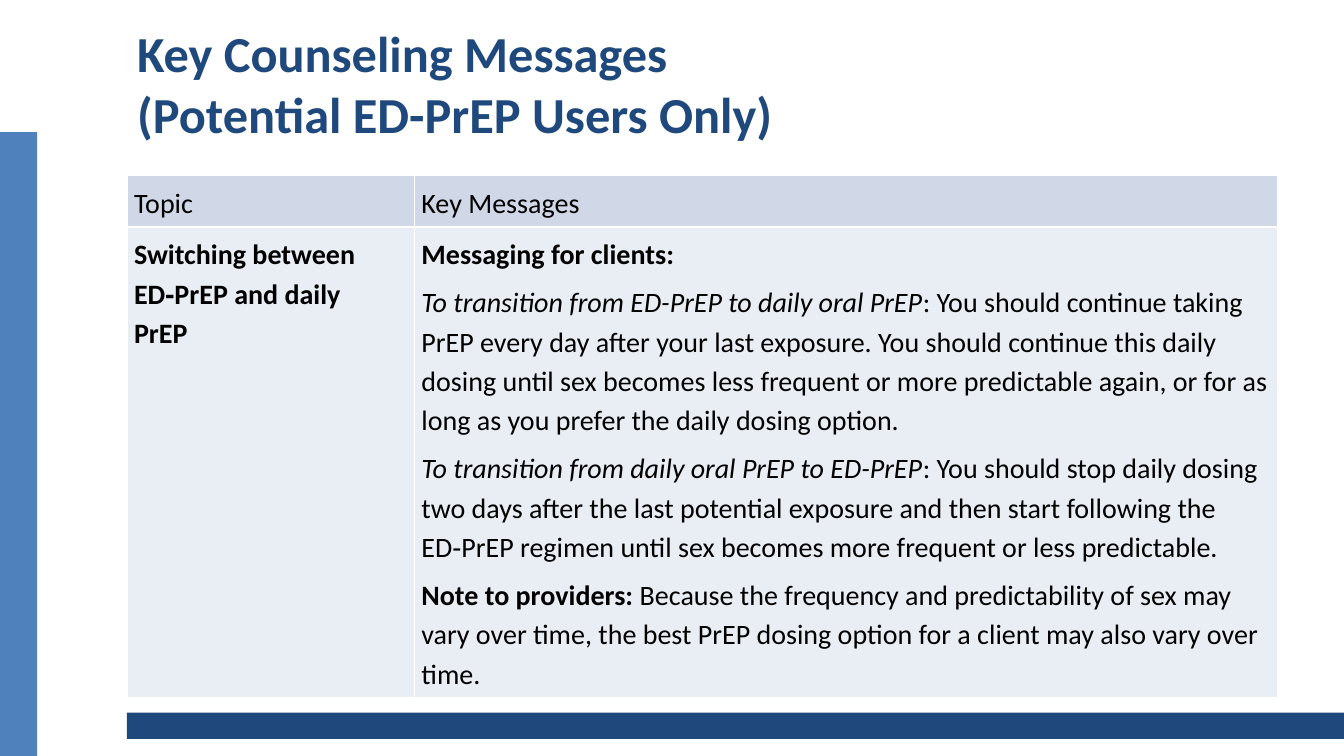
from lxml.etree import SubElement
from pptx import Presentation
from pptx.dml.color import RGBColor
from pptx.enum.shapes import MSO_SHAPE
from pptx.enum.text import MSO_ANCHOR, MSO_AUTO_SIZE, PP_ALIGN
from pptx.oxml.ns import qn
from pptx.util import Pt

PX = 9144  # EMU per px, 100 px to the inch
NAVY, BLUE = "1F497D", "4F81BD"
HEAD, BODY = "D0D8E8", "E9EDF4"
BLACK, WHITE = "000000", "FFFFFF"


def px(*nums):
    return [n * PX for n in nums]


def color(code):
    return RGBColor.from_string(code)


class Deck:
    font = "Calibri"

    def __init__(self, wide, high):
        self.prs = Presentation()
        self.prs.slide_width, self.prs.slide_height = px(wide, high)
        self.slide = self.prs.slides.add_slide(self.prs.slide_layouts[5])

    def style(self, run, size, code, bold=False, italic=False):
        font = run.font
        font.name, font.size = self.font, Pt(size)
        font.bold, font.italic = bold, italic
        font.color.rgb = color(code)

    def bar(self, box, code):
        shape = self.slide.shapes.add_shape(MSO_SHAPE.RECTANGLE, *px(*box))
        shape.shadow.inherit = False
        shape.fill.solid()
        shape.fill.fore_color.rgb = color(code)
        shape.line.fill.background()

    def title(self, box, text):
        shape = self.slide.shapes.title
        shape.left, shape.top, shape.width, shape.height = px(*box)
        frame = shape.text_frame
        frame.text = text
        frame.word_wrap = True
        frame.auto_size = MSO_AUTO_SIZE.NONE
        frame.vertical_anchor = MSO_ANCHOR.MIDDLE
        para = frame.paragraphs[0]
        para.alignment = PP_ALIGN.LEFT
        for run in para.runs:
            self.style(run, 36, NAVY, bold=True)

    def border(self, cell):
        props = cell._tc.get_or_add_tcPr()
        for side in ("lnL", "lnR", "lnT", "lnB"):
            line = SubElement(props, qn("a:" + side), w=str(Pt(1)))
            fill = SubElement(line, qn("a:solidFill"))
            SubElement(fill, qn("a:srgbClr"), val=WHITE)

    def cell(self, cell, paras, code, gap, right):
        self.border(cell)
        cell.fill.solid()
        cell.fill.fore_color.rgb = color(code)
        cell.margin_left, cell.margin_right = px(7, right)
        cell.margin_top, cell.margin_bottom = px(6, 6)
        frame = cell.text_frame
        for i, parts in enumerate(paras):
            para = frame.add_paragraph() if i else frame.paragraphs[0]
            para.line_spacing = 1.15
            para.space_before = Pt(gap)
            for text, mark in parts:
                run = para.add_run()
                run.text = text
                self.style(run, 20, BLACK, mark == "b", mark == "i")

    def table(self, box, cols, rows, data):
        frame = self.slide.shapes.add_table(len(rows), len(cols), *px(*box))
        table = frame.table
        table.first_row = table.horz_banding = False
        for col, wide in zip(table.columns, px(*cols)):
            col.width = wide
        for row, high in zip(table.rows, px(*rows)):
            row.height = high
        for r, line in enumerate(data):
            for c, paras in enumerate(line):
                # The topic column keeps a wider right inset
                self.cell(table.cell(r, c), paras, BODY if r else HEAD,
                          6 if r and c else 0, 7 if c else 20)


TABLE = [
    [[[("Topic", "")]], [[("Key Messages", "")]]],
    [
        [[("Switching between ED‑PrEP and daily PrEP", "b")]],
        [
            [("Messaging for clients:", "b")],
            [("To transition from ED-PrEP to daily oral PrEP", "i"),
             (": You should continue taking PrEP every day after your last "
              "exposure. You should continue this daily dosing until sex "
              "becomes less frequent or more predictable again, or for as "
              "long as you prefer the daily dosing option.", "")],
            [("To transition from daily oral PrEP to ED-PrEP", "i"),
             (": You should stop daily dosing two days after the last "
              "potential exposure and then start following the ED‑PrEP "
              "regimen until sex becomes more frequent or less "
              "predictable.", "")],
            [("Note to providers:", "b"),
             (" Because the frequency and predictability of sex may vary "
              "over time, the best PrEP dosing option for a client may also "
              "vary over time.", "")],
        ],
    ],
]


def main():
    deck = Deck(1333, 750)
    # Side and bottom bars
    deck.bar((0, 131, 37, 619), BLUE)
    deck.bar((126, 707, 1207, 26), NAVY)
    # Title
    deck.title((126, 35, 1141, 94),
               "Key Counseling Messages\v(Potential ED-PrEP Users Only)")
    # Messages by topic
    deck.table((126, 174, 1141, 504), (285, 856), (48, 456), TABLE)
    deck.prs.save("out.pptx")


if __name__ == "__main__":
    main()
